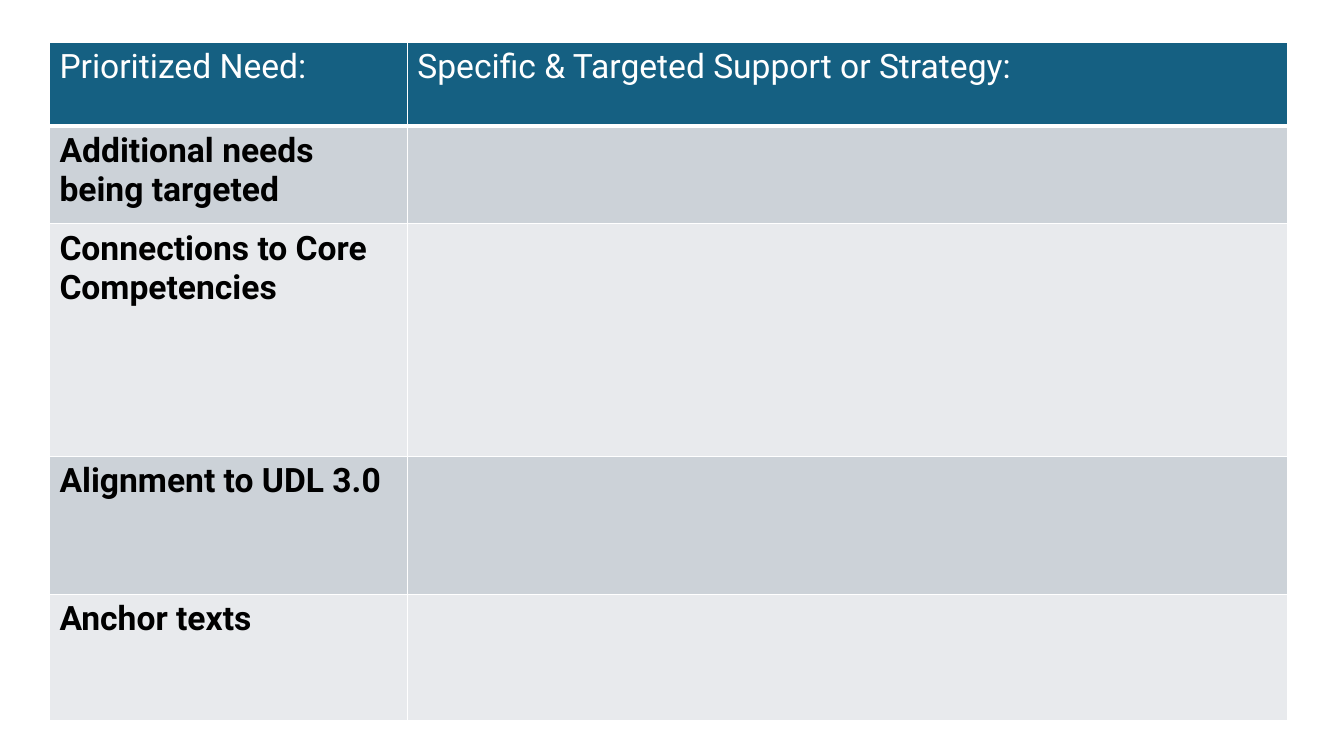
from lxml import etree
from pptx import Presentation
from pptx.dml.color import RGBColor
from pptx.oxml.ns import qn
from pptx.util import Inches, Pt

COLORS = {
    "header": "156082",
    "dark band": "CCD2D8",
    "light band": "E8EAED",
    "border": "FFFFFF",
    "header text": "FFFFFF",
    "label text": "000000",
}
COLUMN_WIDTHS = [3.55, 8.73]
ROW_HEIGHTS = [0.83, 0.97, 2.31, 1.37, 1.25]
ROWS = [
    ["Prioritized Need:", "Specific & Targeted Support or Strategy:"],
    ["Additional needs being targeted", ""],
    ["Connections to Core Competencies", ""],
    ["Alignment to UDL 3.0", ""],
    ["Anchor texts", ""],
]


def add_border(cell, side, points):
    properties = cell._tc.get_or_add_tcPr()
    line = etree.SubElement(properties, qn(f"a:ln{side}"), w=str(Pt(points)))
    fill = etree.SubElement(line, qn("a:solidFill"))
    etree.SubElement(fill, qn("a:srgbClr"), val=COLORS["border"])


presentation = Presentation()
presentation.slide_width = Inches(13.33)
presentation.slide_height = Inches(7.5)
blank_layout = presentation.slide_layouts[6]
slide = presentation.slides.add_slide(blank_layout)

table = slide.shapes.add_table(
    len(ROWS), len(COLUMN_WIDTHS), Inches(0.49), Inches(0.42),
    Inches(sum(COLUMN_WIDTHS)), Inches(sum(ROW_HEIGHTS)),
).table
for column, width in zip(table.columns, COLUMN_WIDTHS):
    column.width = Inches(width)
for row, height in zip(table.rows, ROW_HEIGHTS):
    row.height = Inches(height)

for row_index, texts in enumerate(ROWS):
    is_header = row_index == 0
    if is_header:
        band = "header"
    else:
        band = "dark band" if row_index % 2 else "light band"
    text_color = "header text" if is_header else "label text"

    for column_index, text in enumerate(texts):
        cell = table.cell(row_index, column_index)
        for side in "LRTB":
            add_border(cell, side, 3 if is_header and side == "B" else 1)
        cell.fill.solid()
        cell.fill.fore_color.rgb = RGBColor.from_string(COLORS[band])
        cell.text_frame.text = text
        for run in cell.text_frame.paragraphs[0].runs:
            run.font.name = "Roboto"
            run.font.size = Pt(24)
            run.font.bold = not is_header
            run.font.color.rgb = RGBColor.from_string(COLORS[text_color])

presentation.save("out.pptx")
